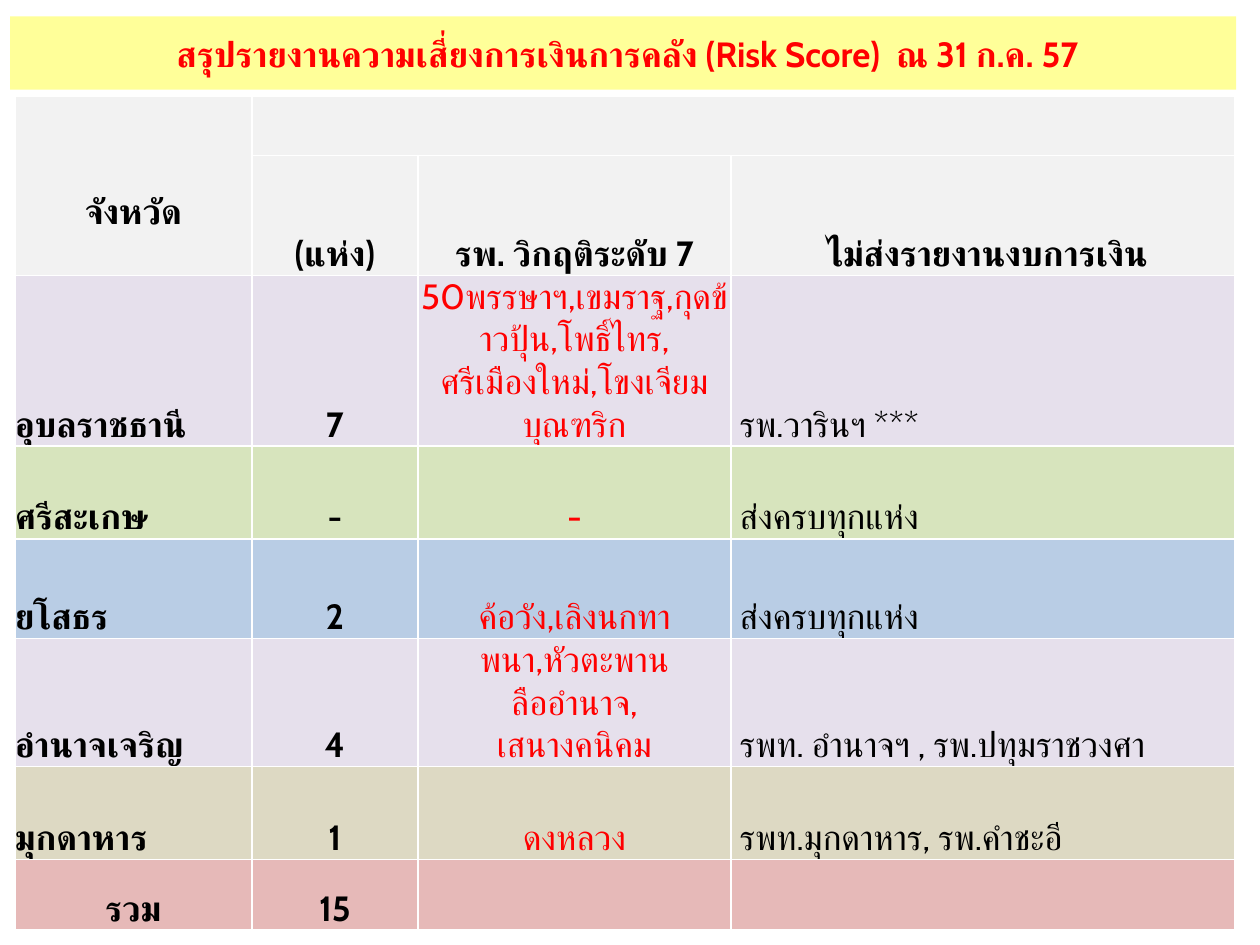
import pptx
import pptx.dml.color
import pptx.enum.shapes
import pptx.enum.text
import pptx.oxml
import pptx.oxml.ns
import pptx.util
from lxml import etree

Pt = pptx.util.Pt
RGBColor = pptx.dml.color.RGBColor
ALIGN = pptx.enum.text.PP_ALIGN
ANCHOR = pptx.enum.text.MSO_ANCHOR
qn = pptx.oxml.ns.qn

BLACK = RGBColor(0x00, 0x00, 0x00)
RED = RGBColor(0xFF, 0x00, 0x00)
YELLOW = RGBColor(0xFF, 0xFF, 0x99)
GRAY = RGBColor(0xF2, 0xF2, 0xF2)
PURPLE = RGBColor(0xE6, 0xE0, 0xEC)
GREEN = RGBColor(0xD7, 0xE4, 0xBD)
BLUE = RGBColor(0xB9, 0xCD, 0xE5)
TAN = RGBColor(0xDD, 0xD9, 0xC3)
PINK = RGBColor(0xE6, 0xB9, 0xB8)

FONT = "Cabin"
TITLE = "สรุปรายงานความเสี่ยงการเงินการคลัง (Risk Score)  ณ 31 ก.ค. 57"
PROVINCE_HEADING = "จังหวัด"
HEADINGS = ["(แห่ง)", "รพ. วิกฤติระดับ 7", "ไม่ส่งรายงานงบการเงิน"]
PROVINCES = [
    ("อุบลราชธานี", "7",
     ["50พรรษาฯ,เขมราฐ,กุดข้าวปุ้น,โพธิ์ไทร,", "ศรีเมืองใหม่,โขงเจียม", "บุณฑริก"],
     "รพ.วารินฯ ***", PURPLE),
    ("ศรีสะเกษ", "-", ["-"], "ส่งครบทุกแห่ง", GREEN),
    ("ยโสธร", "2", ["ค้อวัง,เลิงนกทา"], "ส่งครบทุกแห่ง", BLUE),
    ("อำนาจเจริญ", "4", ["พนา,หัวตะพาน", "ลืออำนาจ,", "เสนางคนิคม"],
     "รพท. อำนาจฯ , รพ.ปทุมราชวงศา", PURPLE),
    ("มุกดาหาร", "1", ["ดงหลวง"], "รพท.มุกดาหาร, รพ.คำชะอี", TAN),
]
TOTAL = ("รวม", "15")

COLUMN_WIDTHS = [135.3, 95, 178.8, 288]
ROW_HEIGHTS = [34, 68.5, 93, 53, 57, 68.5, 53, 40.5]
TABLE_LEFT, TABLE_TOP = 8.6, 54.9
NOTE_INDENT = 5


def write_text(frame, lines, color=BLACK, bold=True, align=ALIGN.CENTER):
    for index, line in enumerate(lines):
        paragraph = frame.paragraphs[0] if index == 0 else frame.add_paragraph()
        paragraph.alignment = align
        run = paragraph.add_run()
        run.text = line
        run.font.name = FONT
        run.font.size = Pt(20)
        run.font.bold = bold
        run.font.color.rgb = color
        complex_font = etree.SubElement(run.font._element, qn("a:cs"))
        complex_font.set("typeface", FONT)


def style_cell(cell, fill):
    cell.vertical_anchor = ANCHOR.BOTTOM
    cell.margin_left = cell.margin_right = cell.margin_top = cell.margin_bottom = 0
    properties = cell._tc.get_or_add_tcPr()
    for side in ("lnL", "lnR", "lnT", "lnB"):
        properties.append(pptx.oxml.parse_xml(
            f'<a:{side} xmlns:a="http://schemas.openxmlformats.org/drawingml/2006/main" w="12700">'
            f'<a:solidFill><a:srgbClr val="FFFFFF"/></a:solidFill></a:{side}>'))
    cell.fill.solid()
    cell.fill.fore_color.rgb = fill


def add_title(slide):
    title = slide.shapes.add_shape(
        pptx.enum.shapes.MSO_SHAPE.RECTANGLE, Pt(5.8), Pt(9.4), Pt(700.6), Pt(41.8))
    title.shadow.inherit = False
    title.fill.solid()
    title.fill.fore_color.rgb = YELLOW
    title.line.fill.background()
    title.text_frame.word_wrap = True
    title.text_frame.vertical_anchor = ANCHOR.MIDDLE
    title.text_frame.margin_left = Pt(12)
    write_text(title.text_frame, [TITLE], color=RED)


def add_risk_table(slide):
    table = slide.shapes.add_table(
        len(ROW_HEIGHTS), len(COLUMN_WIDTHS), Pt(TABLE_LEFT), Pt(TABLE_TOP),
        Pt(sum(COLUMN_WIDTHS)), Pt(sum(ROW_HEIGHTS))).table
    table.first_row = table.horz_banding = False
    for column, width in zip(table.columns, COLUMN_WIDTHS):
        column.width = Pt(width)
    for row, height in zip(table.rows, ROW_HEIGHTS):
        row.height = Pt(height)

    row_fills = [GRAY, GRAY] + [province[-1] for province in PROVINCES] + [PINK]
    for row, fill in zip(table.rows, row_fills):
        for cell in row.cells:
            style_cell(cell, fill)

    table.cell(0, 0).merge(table.cell(1, 0))
    table.cell(0, 1).merge(table.cell(0, 3))
    table.cell(0, 0).margin_bottom = Pt(24)
    write_text(table.cell(0, 0).text_frame, [PROVINCE_HEADING])
    for column, heading in enumerate(HEADINGS, start=1):
        write_text(table.cell(1, column).text_frame, [heading])

    for row, (name, count, hospitals, missing, fill) in enumerate(PROVINCES, start=2):
        frames = [table.cell(row, column).text_frame for column in range(4)]
        write_text(frames[0], [name], align=ALIGN.LEFT)
        write_text(frames[1], [count])
        write_text(frames[2], hospitals, color=RED, bold=False)
        write_text(frames[3], [missing], bold=False, align=ALIGN.LEFT)

    for row in range(1, len(PROVINCES) + 2):
        table.cell(row, 3).margin_left = Pt(NOTE_INDENT)
    for column, value in enumerate(TOTAL):
        write_text(table.cell(len(ROW_HEIGHTS) - 1, column).text_frame, [value])


def main():
    presentation = pptx.Presentation()
    presentation.slide_width = Pt(720)
    presentation.slide_height = Pt(540)
    slide = presentation.slides.add_slide(presentation.slide_layouts[6])
    add_title(slide)
    add_risk_table(slide)
    presentation.save("out.pptx")


if __name__ == "__main__":
    main()
